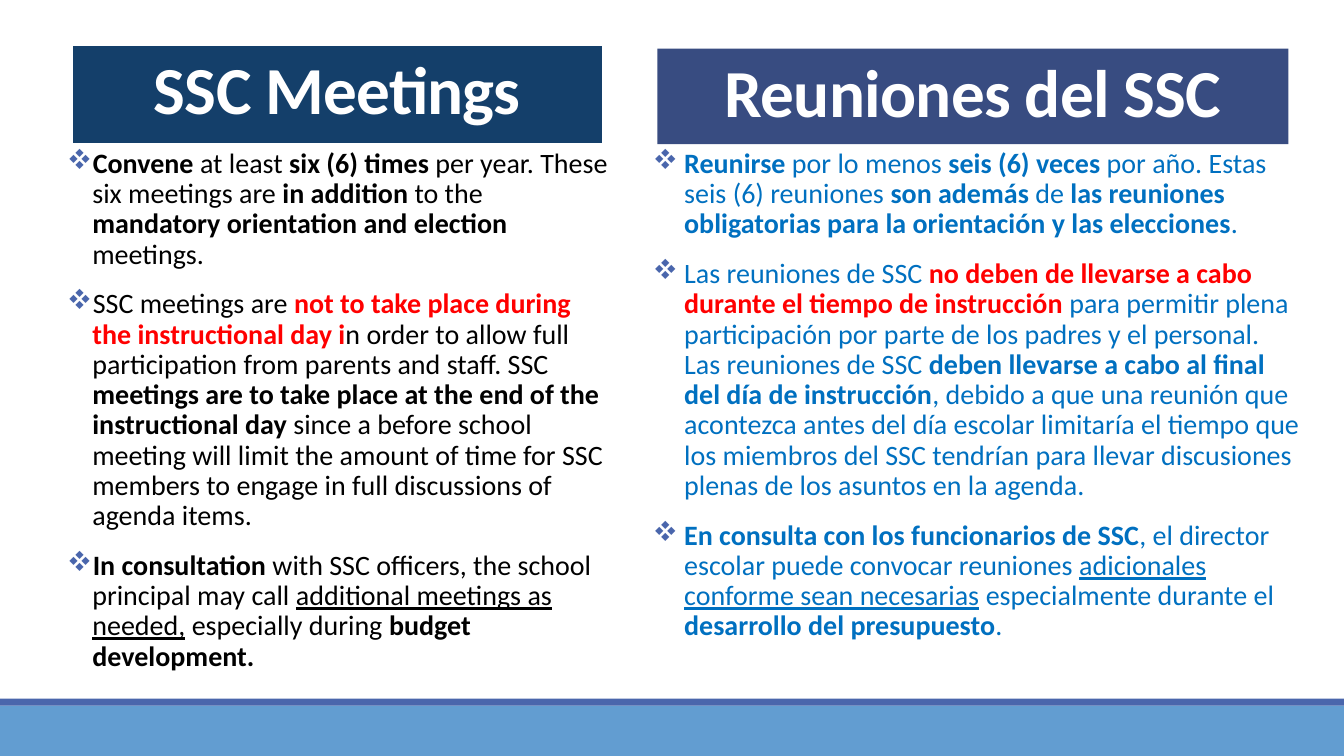
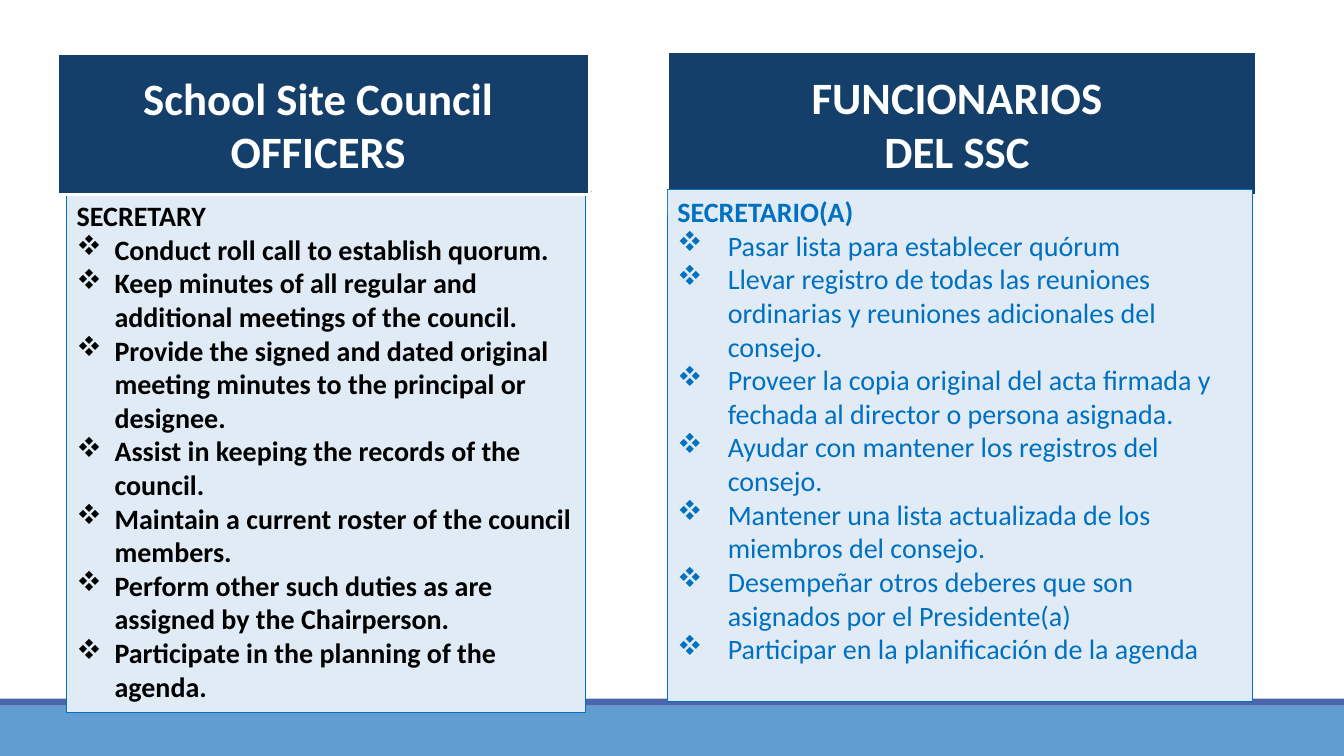
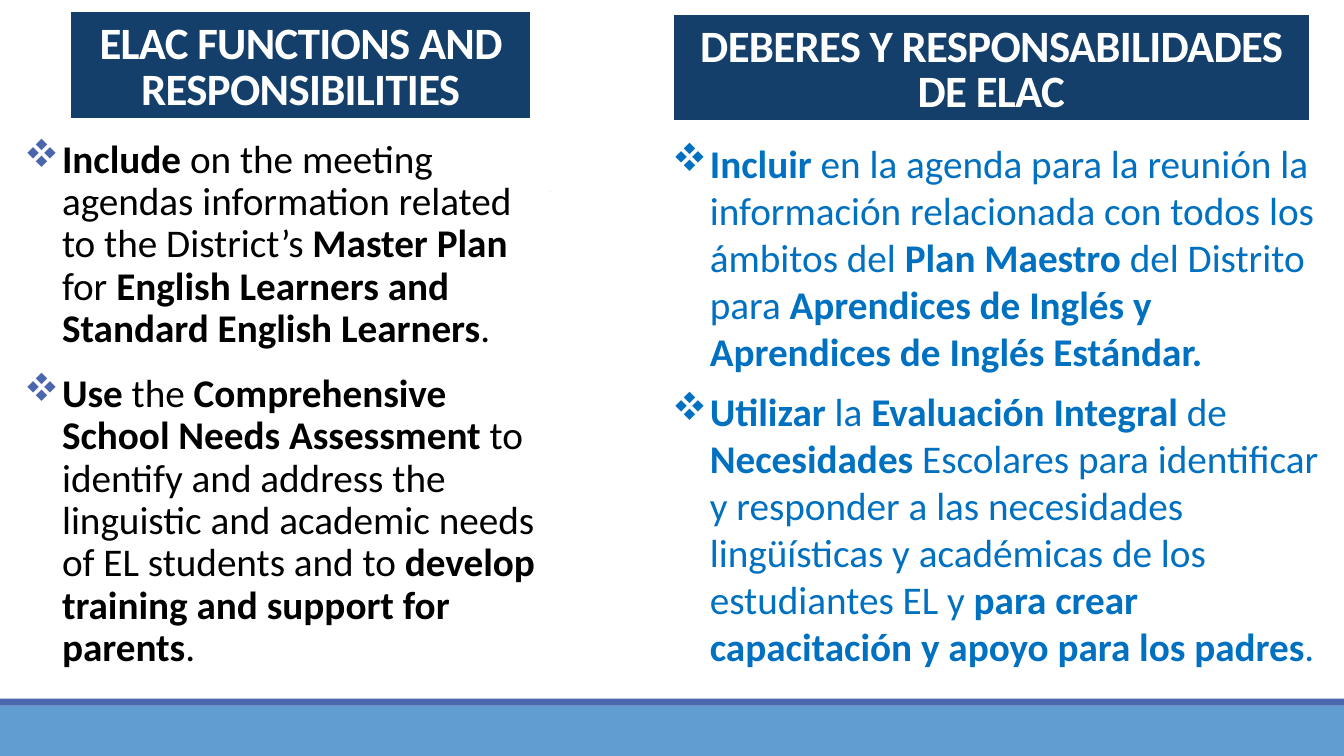
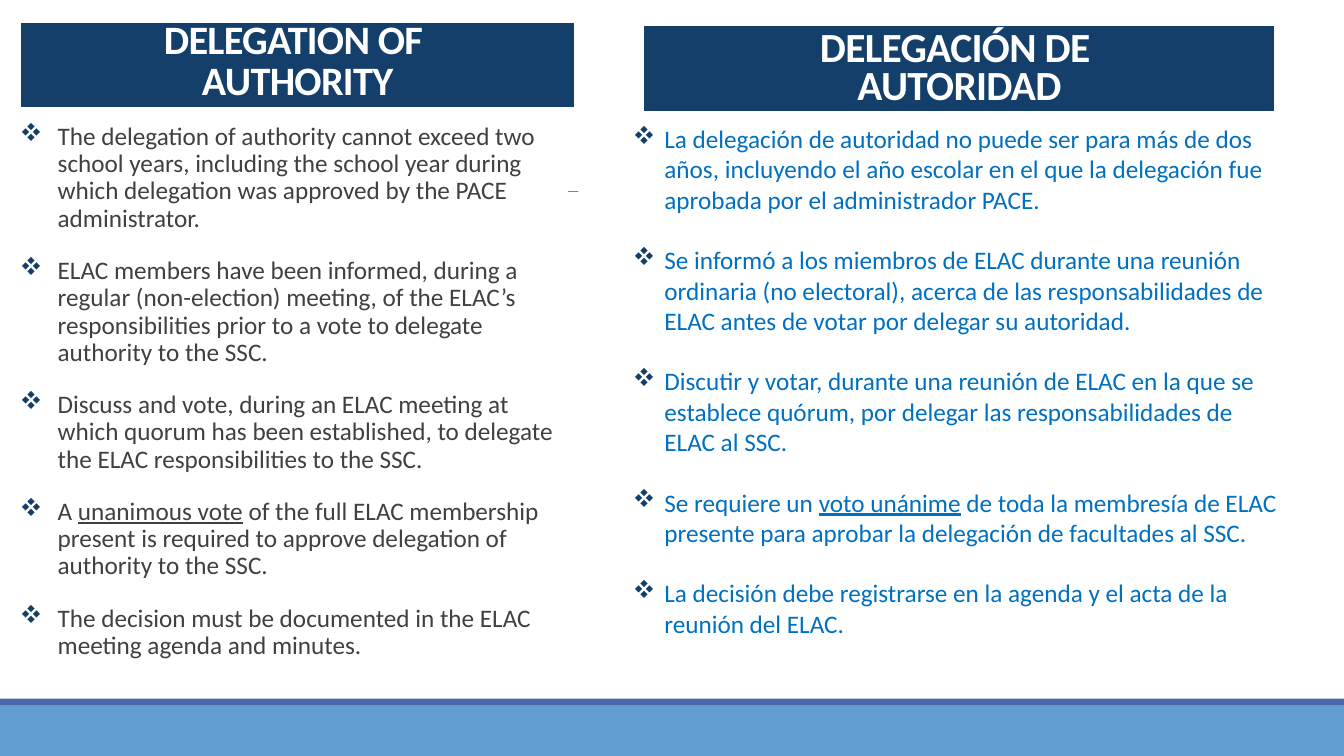
from dataclasses import dataclass

from lxml.etree import SubElement
from pptx import Presentation
from pptx.dml.color import RGBColor
from pptx.enum.shapes import MSO_CONNECTOR as Connector, MSO_SHAPE as Preset
from pptx.enum.text import MSO_ANCHOR as Anchor, PP_ALIGN as Align
from pptx.oxml.ns import qn
from pptx.util import Pt


class Theme:
    font = "Calibri"
    bullet_font, bullet = "Wingdings", "v"
    navy, indigo, accent, sky = "143F6A", "384C81", "4A66AC", "629DD1"
    white, black, charcoal, gray = "FFFFFF", "000000", "404040", "808080"
    blue, red, pale = "0070C0", "FF0000", "E0EBF6"
    hero, title, compact, tight = 48, 32, 28.8, 29.6
    large, medium, small = 28, 20, 18
    outline, border, hairline = 2.25, 0.75, 0.5
    inset = 7.2


@dataclass
class Banner:
    area: tuple
    lines: list
    size: float = Theme.title
    fill: str = Theme.navy
    outline: str = Theme.white
    anchor: Anchor = Anchor.BOTTOM
    spacing: float = 0.85
    tracking: float = -0.5


@dataclass
class Panel:
    area: tuple
    items: list
    size: float
    color: str
    indent: float
    gap: float = 0
    spacing: float = 1
    inset: float = 0
    bullet_color: str = ""
    heading: str = ""
    strong: bool = False
    framed: bool = False


@dataclass
class Gutter:
    area: tuple


def bold(text):
    return text, {"bold": True}


def red(text):
    return text, {"bold": True, "color": Theme.red}


def underline(text):
    return text, {"underline": True}


BANDS = [((0, 504, 960, 36), Theme.sky), ((0, 499, 960, 5), Theme.accent)]
RULE = (94.3, 136.8, 879.1, 136.8)

MEETINGS = [
    [bold("Convene "), "at least ", bold("six (6) times "), "per year. These six meetings are ",
     bold("in addition "), "to the ", bold("mandatory orientation and election "), "meetings."],
    ["SSC meetings are ", red("not to take place during the instructional day i"),
     "n order to allow full participation from parents and staff. SSC ",
     bold("meetings are to take place at the end of the instructional day"),
     " since a before school meeting will limit the amount of time for SSC members "
     "to engage in full discussions of agenda items."],
    [bold("In consultation "), "with SSC officers, the school principal may call ",
     underline("additional meetings as needed,"), " especially during ",
     bold("budget development.")],
]

REUNIONES = [
    [bold("Reunirse"), " por lo menos ", bold("seis (6) veces "),
     "por año. Estas seis (6) reuniones ", bold("son además "), "de ",
     bold("las reuniones obligatorias para la orientación y las elecciones"), "."],
    ["Las reuniones de SSC ",
     red("no deben de llevarse a cabo durante el tiempo de instrucción "),
     "para permitir plena participación por parte de los padres y el personal. "
     "Las reuniones de SSC ",
     bold("deben llevarse a cabo al final del día de instrucción"),
     ", debido a que una reunión que acontezca antes del día escolar limitaría el tiempo "
     "que los miembros del SSC tendrían para llevar discusiones plenas de los asuntos "
     "en la agenda."],
    [bold("En consulta con los funcionarios de SSC"),
     ", el director escolar puede convocar reuniones ",
     underline("adicionales conforme sean necesarias"), " especialmente durante el ",
     bold("desarrollo del presupuesto"), "."],
]

SECRETARY = [
    ["Conduct roll call to establish quorum."],
    ["Keep minutes of all regular and additional meetings of the council."],
    ["Provide the signed and dated original meeting minutes to the principal or designee."],
    ["Assist in keeping the records of the council."],
    ["Maintain a current roster of the council members."],
    ["Perform other such duties as are assigned by the Chairperson."],
    ["Participate in the planning of the agenda."],
]

SECRETARIO = [
    ["Pasar lista para establecer quórum"],
    ["Llevar registro de todas las reuniones ordinarias y reuniones adicionales del consejo."],
    ["Proveer la copia original del acta firmada y fechada al director o persona asignada."],
    ["Ayudar con mantener los registros del consejo."],
    ["Mantener una lista actualizada de los miembros del consejo."],
    ["Desempeñar otros deberes que son asignados por el Presidente(a)"],
    ["Participar en la planificación de la agenda"],
]

FUNCTIONS = [
    [bold("Include "), "on the meeting agendas information related to the District’s ",
     bold("Master Plan "), "for ", bold("English Learners and Standard English Learners"), "."],
    [bold("Use"), " the ", bold("Comprehensive School Needs Assessment "),
     "to identify and address the linguistic and academic needs of EL students and to ",
     bold("develop training and support for parents"), "."],
]

DEBERES = [
    [bold("Incluir"),
     " en la agenda para la reunión la información relacionada con todos los ámbitos del ",
     bold("Plan Maestro "), "del Distrito para ",
     bold("Aprendices de Inglés y Aprendices de Inglés Estándar.")],
    [bold("Utilizar"), " la ", bold("Evaluación Integral "), "de ", bold("Necesidades"),
     " Escolares para identificar y responder a las necesidades lingüísticas y académicas "
     "de los estudiantes EL y ",
     bold("para crear capacitación y apoyo para los padres"), "."],
]

DELEGATION = [
    ["The delegation of authority cannot exceed two school years, including the school year "
     "during which delegation was approved by the PACE administrator."],
    ["ELAC members have been informed, during a regular (non-election) meeting, of the "
     "ELAC’s responsibilities prior to a vote to delegate authority to the SSC."],
    ["Discuss and vote, during an ELAC meeting at which quorum has been established, "
     "to delegate the ELAC responsibilities to the SSC."],
    ["A ", underline("unanimous vote"), " of the full ELAC membership present is required "
     "to approve delegation of authority to the SSC."],
    ["The decision must be documented in the ELAC meeting agenda and minutes."],
]

DELEGACION = [
    ["La delegación de autoridad no puede ser para más de dos años, incluyendo el año escolar "
     "en el que la delegación fue aprobada por el administrador PACE."],
    ["Se informó a los miembros de ELAC durante una reunión ordinaria (no electoral), acerca "
     "de las responsabilidades de ELAC antes de votar por delegar su autoridad."],
    ["Discutir y votar, durante una reunión de ELAC en la que se establece quórum, por "
     "delegar las responsabilidades de ELAC al SSC."],
    ["Se requiere un ", underline("voto unánime"), " de toda la membresía de ELAC presente "
     "para aprobar la delegación de facultades al SSC."],
    ["La decisión debe registrarse en la agenda y el acta de la reunión del ELAC."],
]

PAGES = [
    [
        Panel((48, 103, 390, 390), MEETINGS, Theme.medium, Theme.black, 18,
              gap=14, spacing=0.9, bullet_color=Theme.accent),
        Banner((51, 31.7, 380, 71.3), ["SSC Meetings"], Theme.hero, anchor=Anchor.MIDDLE),
        Gutter((432, 127.5, 40.3, 22.3)),
        Panel((466.4, 103, 463, 379.4), REUNIONES, Theme.medium, Theme.blue, 22.3,
              gap=14, spacing=0.9, bullet_color=Theme.accent),
        Banner((469.6, 34.8, 450.8, 68.2), ["Reuniones del SSC"], Theme.hero,
               fill=Theme.indigo, outline="", anchor=Anchor.MIDDLE),
    ],
    [
        Panel((47.7, 138.3, 370.7, 370.8), SECRETARY, Theme.medium, Theme.black, 27,
              inset=Theme.inset, heading="SECRETARY", strong=True, framed=True),
        Banner((41, 38.3, 380, 100.8), ["School Site Council ", "OFFICERS "],
               anchor=Anchor.MIDDLE, spacing=1, tracking=0),
        Banner((476.7, 36.8, 421.2, 103), ["FUNCIONARIOS ", "DEL SSC "],
               anchor=Anchor.MIDDLE, spacing=1, tracking=0),
        Panel((476.8, 135.5, 417.7, 365.8), SECRETARIO, Theme.medium, Theme.blue, 36,
              inset=Theme.inset, heading="SECRETARIO(A)", framed=True),
        Gutter((422.6, 99.4, 54, 54)),
    ],
    [
        Gutter((393.1, 105.1, 118.1, 60.5)),
        Panel((17.3, 96, 375.8, 389.5), FUNCTIONS, Theme.large, Theme.black, 27,
              gap=16, spacing=0.9, bullet_color=Theme.accent),
        Banner((480.2, 9.4, 455.8, 77.7), ["DEBERES Y RESPONSABILIDADES DE ELAC"]),
        Panel((473, 95.75, 487, 389.5), DEBERES, Theme.large, Theme.blue, 27,
              gap=9.2, inset=Theme.inset),
        Banner((49.6, 7.3, 330.4, 77.8), ["ELAC FUNCTIONS AND RESPONSIBILITIES"]),
    ],
    [
        Banner((14.2, 15, 396.7, 62.7), ["DELEGATION OF ", "AUTHORITY"], Theme.compact),
        Panel((14.2, 84.8, 391.7, 370.8), DELEGATION, Theme.small, Theme.charcoal, 27,
              gap=18, spacing=0.9, bullet_color=Theme.navy),
        Panel((445, 84.7, 480.2, 390.2), DELEGACION, Theme.small, Theme.blue, 22.5,
              gap=21.7, inset=Theme.inset, bullet_color=Theme.navy),
        Banner((459.2, 17.8, 452.2, 62.7), ["DELEGACIÓN DE ", "AUTORIDAD"], Theme.tight,
               spacing=0.75),
        Gutter((413.1, 109.4, 41, 36.7)),
    ],
]


def rgb(color):
    return RGBColor.from_string(color)


def points(values):
    return [Pt(value) for value in values]


def add_block(page, area, fill, outline="", width=0):
    block = page.shapes.add_shape(Preset.RECTANGLE, *points(area))
    block.shadow.inherit = False
    block.fill.solid()
    block.fill.fore_color.rgb = rgb(fill)
    if outline:
        block.line.color.rgb = rgb(outline)
        block.line.width = Pt(width)
    else:
        block.line.fill.background()
    return block


def set_frame(box, inset, anchor):
    frame = box.text_frame
    frame.word_wrap = True
    frame.margin_left = frame.margin_right = Pt(inset)
    frame.margin_top = frame.margin_bottom = Pt(3.6)
    frame.vertical_anchor = anchor
    return frame


def next_para(frame, index, spacing, align=Align.LEFT, gap=0):
    para = frame.add_paragraph() if index else frame.paragraphs[0]
    para.alignment = align
    para.line_spacing = spacing
    if index and gap:
        para.space_before = Pt(gap)
    return para


def add_span(para, text, size, color, bold=False, underline=False, tracking=0):
    span = para.add_run()
    span.text = text
    font = span.font
    font.name, font.size, font.bold = Theme.font, Pt(size), bold
    font.color.rgb = rgb(color)
    if underline:
        font.underline = True
    if tracking:
        span._r.get_or_add_rPr().set("spc", str(int(tracking * 100)))


def add_bullet(para, indent, color):
    props = para._p.get_or_add_pPr()
    props.set("marL", str(Pt(indent)))
    props.set("indent", str(-Pt(indent)))
    if color:
        SubElement(SubElement(props, qn("a:buClr")), qn("a:srgbClr")).set("val", color)
    face = SubElement(props, qn("a:buFont"))
    face.set("typeface", Theme.bullet_font)
    face.set("charset", "2")
    SubElement(props, qn("a:buChar")).set("char", Theme.bullet)


def draw_banner(page, banner):
    box = add_block(page, banner.area, banner.fill, banner.outline, Theme.outline)
    frame = set_frame(box, Theme.inset, banner.anchor)
    for index, line in enumerate(banner.lines):
        para = next_para(frame, index, banner.spacing, Align.CENTER)
        add_span(para, line, banner.size, Theme.white, bold=True, tracking=banner.tracking)


def draw_panel(page, panel):
    if panel.framed:
        box = add_block(page, panel.area, Theme.pale, Theme.blue, Theme.border)
    else:
        box = add_block(page, panel.area, Theme.white)
    frame = set_frame(box, panel.inset, Anchor.TOP)
    headings = [[bold(panel.heading)]] if panel.heading else []
    for index, parts in enumerate(headings + panel.items):
        para = next_para(frame, index, panel.spacing, gap=panel.gap)
        if index >= len(headings):
            add_bullet(para, panel.indent, panel.bullet_color)
        for part in parts:
            text, style = (part, {}) if isinstance(part, str) else part
            look = {"color": panel.color, "bold": panel.strong, **style}
            add_span(para, text, panel.size, **look)


def draw_gutter(page, gutter):
    add_block(page, gutter.area, Theme.white)


def add_rule(page):
    rule = page.shapes.add_connector(Connector.STRAIGHT, *points(RULE))
    rule.line.color.rgb = rgb(Theme.gray)
    rule.line.width = Pt(Theme.hairline)
    SubElement(rule._element.spPr, qn("a:effectLst"))
    return rule


def furnish_master(deck, page):
    parts = [add_block(page, area, fill) for area, fill in BANDS] + [add_rule(page)]
    for part in parts:
        deck.slide_master.shapes.element.append(part.element)


DRAW = {Banner: draw_banner, Panel: draw_panel, Gutter: draw_gutter}


def main():
    deck = Presentation()
    deck.slide_width, deck.slide_height = Pt(960), Pt(540)
    for number, boxes in enumerate(PAGES):
        page = deck.slides.add_slide(deck.slide_layouts[6])
        for placeholder in list(page.placeholders):
            placeholder.element.getparent().remove(placeholder.element)
        if number == 0:
            furnish_master(deck, page)
        for box in boxes:
            DRAW[type(box)](page, box)
    deck.save("out.pptx")


if __name__ == "__main__":
    main()
